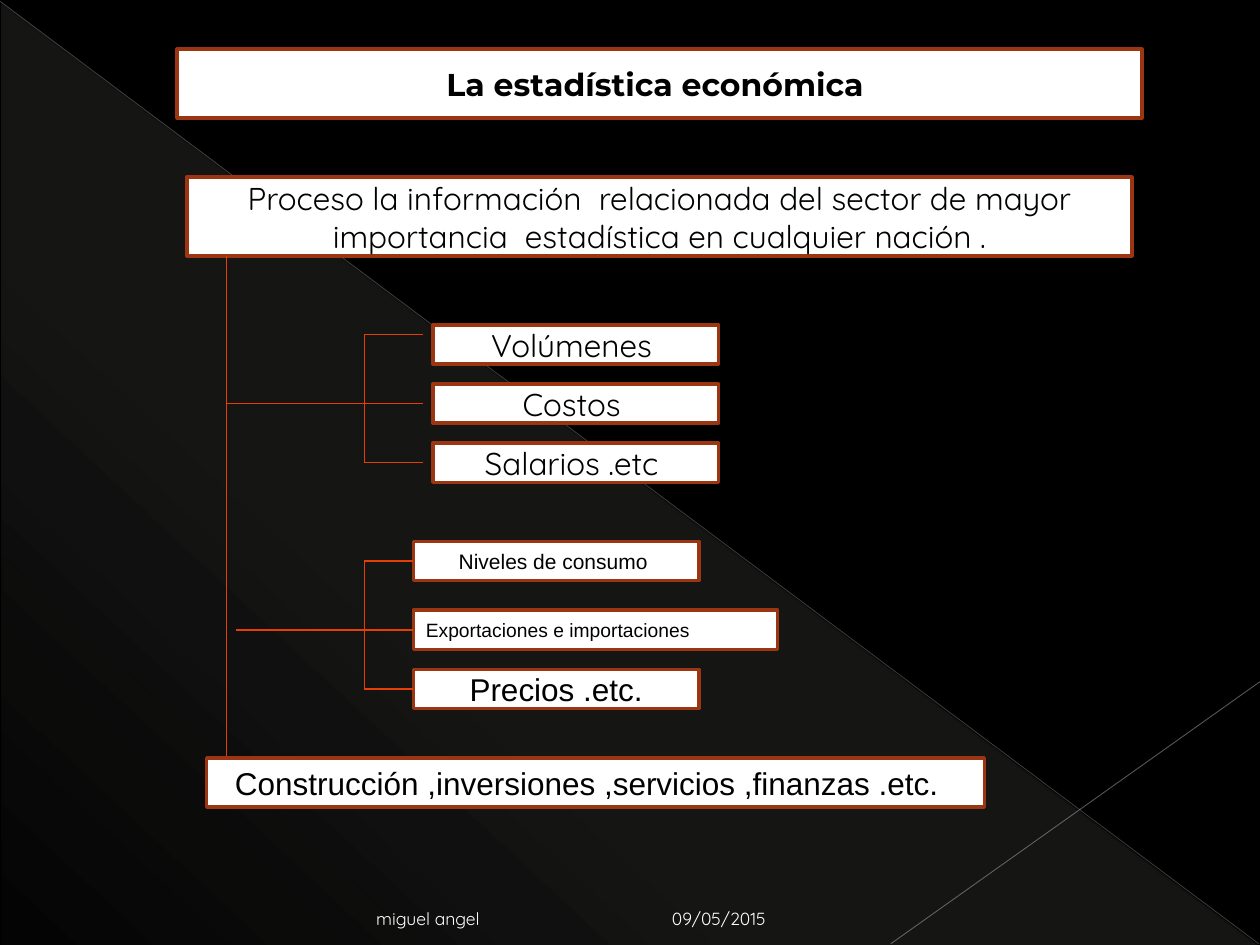
from lxml.etree import SubElement
from pptx import Presentation
from pptx.dml.color import RGBColor
from pptx.enum.shapes import MSO_CONNECTOR, MSO_SHAPE
from pptx.enum.text import MSO_ANCHOR, MSO_AUTO_SIZE, PP_ALIGN
from pptx.oxml import parse_xml
from pptx.oxml.ns import nsdecls, qn
from pptx.util import Inches, Pt

COLUMNS, ROWS = 128, 96


def colour(value):
    """Turn a hex string into a colour."""
    return RGBColor.from_string(value)


class Board:
    """Hold the style and the current slide, measured on a 128 by 96 grid."""

    ink, paper, border, branch = "000000", "FFFFFF", "9C3511", "E63F04"

    def __init__(self, deck):
        """Add a black slide with a title to the deck."""
        self.unit_x = deck.slide_width / COLUMNS
        self.unit_y = deck.slide_height / ROWS
        self.page = deck.slides.add_slide(deck.slide_layouts[5])
        self.page.background.fill.solid()
        self.page.background.fill.fore_color.rgb = colour(self.ink)

    def place(self, left, top, width, height):
        """Convert a grid rectangle to slide lengths."""
        return (round(left * self.unit_x), round(top * self.unit_y),
                round(width * self.unit_x), round(height * self.unit_y))

    def letter(self, shape, text, size, font, ink, align, anchor, bold=False):
        """Put one formatted span into a shape."""
        frame = shape.text_frame
        frame.word_wrap = True
        frame.auto_size = MSO_AUTO_SIZE.NONE
        frame.vertical_anchor = anchor
        para = frame.paragraphs[0]
        para.alignment = align
        span = para.add_run()
        span.text = text
        span.font.size = Pt(size)
        span.font.name = font
        span.font.bold = bold
        span.font.color.rgb = colour(ink)

    def frame(self, shape, text, size, font, align=PP_ALIGN.CENTER, bold=False):
        """Give a shape the white fill, the rust border and its text."""
        shape.fill.solid()
        shape.fill.fore_color.rgb = colour(self.paper)
        shape.line.color.rgb = colour(self.border)
        shape.line.width = Pt(2)
        self.letter(shape, text, size, font, self.ink, align, MSO_ANCHOR.MIDDLE, bold)

    def title(self, area, text):
        """Move the title placeholder to the front and format it."""
        title = self.page.shapes.title
        title.left, title.top, title.width, title.height = self.place(*area)
        self.page.shapes.element.append(title.element)
        self.frame(title, text, 18, "Montserrat", bold=True)

    def box(self, area, text, size=18, font="Quicksand", align=PP_ALIGN.CENTER):
        """Add a framed rectangle with text."""
        box = self.page.shapes.add_shape(MSO_SHAPE.RECTANGLE, *self.place(*area))
        box.shadow.inherit = False
        self.frame(box, text, size, font, align)
        return box

    def line(self, start, end, ink=branch, width=0.75, opacity=100, target=None):
        """Add a line, joined to the left side of a target box if given."""
        line = self.page.shapes.add_connector(
            MSO_CONNECTOR.STRAIGHT, *self.place(*start, *end))
        if target is not None:
            line.end_connect(target, 1)
        line.line.color.rgb = colour(ink)
        line.line.width = Pt(width)
        properties = line.element.spPr
        if opacity < 100:
            tint = next(properties.iter(qn("a:srgbClr")))
            SubElement(tint, qn("a:alpha")).set("val", str(opacity * 1000))
        SubElement(properties, qn("a:effectLst"))

    def wedge(self, area, ink, stops, angle):
        """Add a right triangle with a translucent gradient."""
        wedge = self.page.shapes.add_shape(MSO_SHAPE.RIGHT_TRIANGLE, *self.place(*area))
        wedge.shadow.inherit = False
        wedge.line.fill.background()
        wedge.fill.background()
        marks = "".join(
            f'<a:gs pos="{position * 1000}"><a:srgbClr val="{ink}">'
            f'<a:alpha val="{opacity * 1000}"/></a:srgbClr></a:gs>'
            for position, opacity in stops)
        gradient = parse_xml(
            f'<a:gradFill {nsdecls("a")} rotWithShape="1"><a:gsLst>{marks}</a:gsLst>'
            f'<a:lin ang="{angle * 60000}" scaled="0"/></a:gradFill>')
        properties = wedge.element.spPr
        properties.replace(properties.find(qn("a:noFill")), gradient)

    def footer(self, area, text, align=PP_ALIGN.LEFT, right=0.1):
        """Add a small white footer text."""
        box = self.page.shapes.add_textbox(*self.place(*area))
        box.text_frame.margin_right = Inches(right)
        self.letter(box, text, 10, "Quicksand", self.paper, align, MSO_ANCHOR.BOTTOM)

    def fork(self, top, middle, bottom, stem, targets=(None, None, None)):
        """Draw a stem, a spine and three prongs towards the boxes."""
        spine, tip = 37, 43
        self.line((stem, middle), (spine, middle))
        self.line((spine, top), (spine, bottom))
        for row, target in zip((top, middle, bottom), targets):
            self.line((spine, row), (tip, row), target=target)


def main():
    """Build and save the slide."""
    deck = Presentation()
    deck.slide_width, deck.slide_height = Inches(10), Inches(7.5)
    board = Board(deck)

    board.wedge((0.13, 0.26, 127.74, 95.74), "E9E5DC", ((0, 10), (70, 8), (100, 1)), 133)
    board.line((0, 0.13), (127.87, 95.87), "C1BEBE", 0.39, 35)
    board.line((128, 69.25), (90.5, 95.87), "C7C5C5", 0.47, 45)

    board.title((18, 5, 98, 7), "La estadística económica ")
    board.box((19, 18, 96, 8), "Proceso la información  relacionada del sector de mayor "
              "importancia  estadística en cualquier nación .")
    board.line((23, 26), (23, 78))

    for index, text in enumerate(("Volúmenes ", "Costos ", "Salarios .etc ")):
        board.box((44, 33 + 6 * index, 29, 4), text)
    board.fork(34, 41, 47, stem=23)

    levels = (
        (55, 29, "Niveles de consumo ", 12, PP_ALIGN.CENTER),
        (62, 37, "Exportaciones e importaciones", 11, PP_ALIGN.LEFT),
        (68, 29, "Precios .etc.", 18, PP_ALIGN.CENTER),
    )
    targets = [board.box((42, row, width, 4), text, size, "Arial", align)
               for row, width, text, size, align in levels]
    board.fork(57, 64, 70, stem=24, targets=targets)

    board.box((21, 77, 79, 5), "Construcción ,inversiones ,servicios ,finanzas .etc.  ",
              font="Arial")
    board.footer((67, 90.75, 30, 4.25), "09/05/2015")
    board.footer((6.4, 90.75, 59.6, 4.25), "miguel angel", PP_ALIGN.RIGHT, right=1.35)

    deck.save("out.pptx")


if __name__ == "__main__":
    main()
